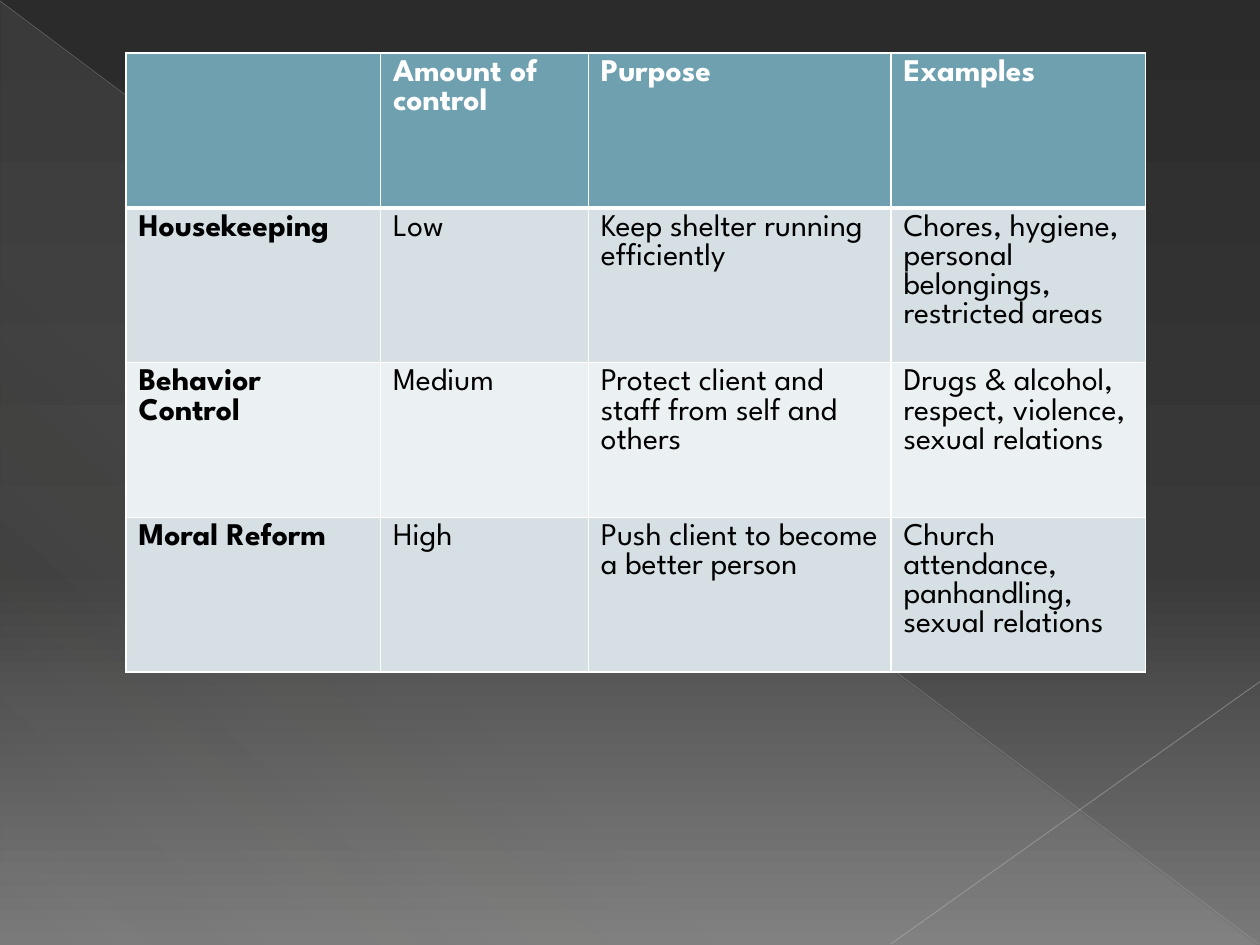
from lxml.etree import SubElement
from pptx import Presentation
from pptx.dml.color import RGBColor
from pptx.enum.shapes import MSO_CONNECTOR, MSO_SHAPE
from pptx.oxml import parse_xml
from pptx.oxml.ns import nsdecls, qn
from pptx.util import Cm, Pt

WHITE = RGBColor(0xFF, 0xFF, 0xFF)
BLACK = RGBColor(0, 0, 0)
TEAL = RGBColor(0x6E, 0xA0, 0xB0)
MIST = RGBColor(0xD5, 0xDF, 0xE4)
PALE = RGBColor(0xEB, 0xF0, 0xF2)
SAND = RGBColor(0xD4, 0xD2, 0xD0)
ASH = RGBColor(0xB7, 0xB7, 0xB7)
GREY = RGBColor(0xBF, 0xBF, 0xBF)
NIGHT = RGBColor(0x2B, 0x2B, 0x2B)
COAL = RGBColor(0x39, 0x39, 0x39)
STEEL = RGBColor(0x79, 0x79, 0x79)

FONT = {"name": "League Spartan", "size": Pt(18)}
WIDTHS = [5.13, 4.19, 6.1, 5.13]
ROW = 3.12
ROWS = [
    ["", "Amount of control", "Purpose", "Examples"],
    ["Housekeeping", "Low", "Keep shelter running efficiently",
     "Chores, hygiene, personal belongings, restricted areas"],
    ["Behavior Control", "Medium",
     "Protect client and staff from self and others",
     "Drugs & alcohol, respect, violence, sexual relations"],
    ["Moral Reform", "High", "Push client to become a better person",
     "Church attendance, panhandling, sexual relations"],
]


def fade(color, alpha):
    """Set the opacity, in percent, of a colour element."""
    SubElement(color, qn("a:alpha"), val=str(alpha * 1000))


def blend(fill, root, stops, angle):
    """Give a gradient of (percent, colour, opacity) stops, turned clockwise."""
    fill.gradient()
    fill.gradient_angle = 360 - angle
    group = root.find(".//" + qn("a:gsLst"))
    for old in list(group):
        group.remove(old)
    for pos, color, alpha in stops:
        stop = SubElement(group, qn("a:gs"), pos=str(pos * 1000))
        fade(SubElement(stop, qn("a:srgbClr"), val=str(color)), alpha)


def add_line(slide, start, end, color, width, alpha):
    line = slide.shapes.add_connector(
        MSO_CONNECTOR.STRAIGHT, *(Cm(v) for v in start + end))
    line.line.color.rgb = color
    line.line.width = Pt(width)
    props = line._element.spPr
    fade(props.find(".//" + qn("a:srgbClr")), alpha)
    SubElement(props, qn("a:effectLst"))


def add_backdrop(slide, left, top, width, height):
    blend(slide.background.fill, slide.element,
          [(0, NIGHT, 100), (60, COAL, 100), (100, STEEL, 100)], 90)
    wedge = slide.shapes.add_shape(
        MSO_SHAPE.RIGHT_TRIANGLE, Cm(left + 0.02), Cm(top + 0.04),
        Cm(width - 0.05), Cm(height - 0.04))
    wedge.shadow.inherit = False
    wedge.line.fill.background()
    blend(wedge.fill, wedge.element,
          [(0, SAND, 10), (70, SAND, 8), (100, SAND, 1)], 133)
    right, base = left + width, top + height - 0.02
    add_line(slide, (left, top + 0.02), (right - 0.02, base), ASH, 0.39, 35)
    add_line(slide, (right, top + 13.74), (right - 7.44, base), GREY, 0.47, 45)


def add_borders(cell, widths):
    """Draw white cell borders from a dict of side letter to points."""
    props = cell._tc.get_or_add_tcPr()
    for spot, (side, width) in enumerate(widths.items()):
        props.insert(spot, parse_xml(
            f'<a:ln{side} {nsdecls("a")} w="{Pt(width)}"><a:solidFill>'
            f'<a:srgbClr val="{WHITE}"/></a:solidFill></a:ln{side}>'))


def add_grid(slide, left, top):
    grid = slide.shapes.add_table(
        len(ROWS), len(WIDTHS), Cm(left), Cm(top),
        Cm(sum(WIDTHS)), Cm(ROW * len(ROWS))).table
    for col, width in zip(grid.columns, WIDTHS):
        col.width = Cm(width)
    for r, texts in enumerate(ROWS):
        grid.rows[r].height = Cm(ROW)
        shade = TEAL if r == 0 else (PALE, MIST)[r % 2]
        rules = {"L": 1, "R": 1, "T": 3 if r == 1 else 1,
                 "B": 3 if r == 0 else 1}
        for c, text in enumerate(texts):
            cell = grid.cell(r, c)
            cell.fill.solid()
            cell.fill.fore_color.rgb = shade
            add_borders(cell, rules)
            cell.text = text
            font = cell.text_frame.paragraphs[0].font
            for key, value in {**FONT, "bold": r == 0 or c == 0}.items():
                setattr(font, key, value)
            font.color.rgb = BLACK if r else WHITE


def main():
    deck = Presentation()
    deck.slide_width, deck.slide_height = Cm(25.4), Cm(19.05)
    slide = deck.slides.add_slide(deck.slide_layouts[6])
    add_backdrop(slide, 0, 0, 25.4, 19.05)
    add_grid(slide, 2.54, 1.07)
    deck.save("out.pptx")


if __name__ == "__main__":
    main()
